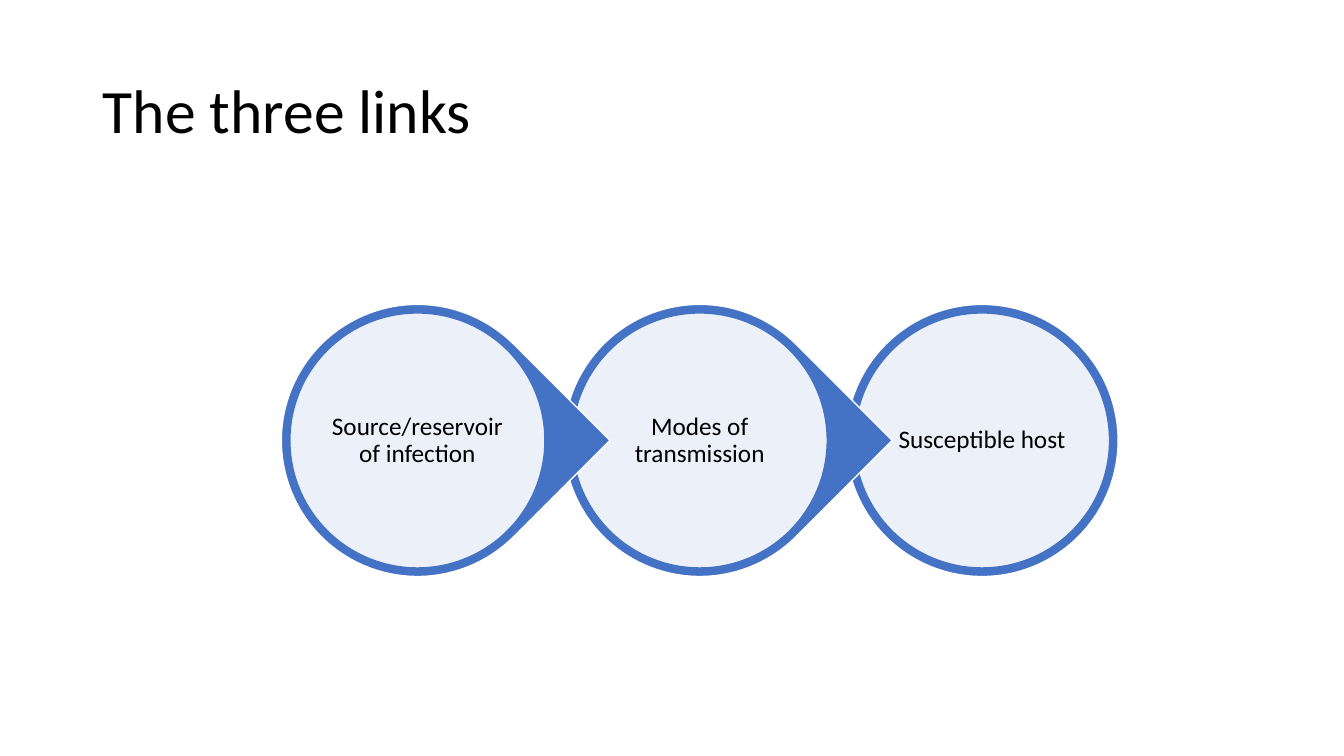
"""Build a slide showing the chain of three links of infection."""
from lxml.etree import SubElement
from pptx import Presentation
from pptx.dml.color import RGBColor
from pptx.enum.shapes import MSO_SHAPE
from pptx.enum.text import MSO_ANCHOR, PP_ALIGN
from pptx.oxml.ns import qn
from pptx.util import Inches, Pt

TITLE = "The three links"
LINKS = ["Source/reservoir of infection", "Modes of transmission", "Susceptible host"]
COLORS = {"blue": "4472C4", "white": "FFFFFF", "black": "000000"}
FONT = "Calibri"

LEFT, TOP, PITCH = 2.79, 3.02, 2.8
RING, DISC = 2.7, 2.53
INSET = (RING - DISC) / 2


def color(name):
    return RGBColor.from_string(COLORS[name])


def format_text(tf, size, align):
    tf.word_wrap = True
    tf.vertical_anchor = MSO_ANCHOR.MIDDLE
    p = tf.paragraphs[0]
    p.alignment = align
    p.line_spacing = 0.9
    font = p.runs[0].font
    font.name, font.size = FONT, Pt(size)
    font.color.rgb = color("black")


def add_round(slide, kind, x, y, size, fill, line):
    sp = slide.shapes.add_shape(kind, Inches(x), Inches(y), Inches(size), Inches(size))
    sp.shadow.inherit = False
    sp.fill.solid()
    sp.fill.fore_color.rgb = color(fill)
    sp.line.color.rgb = color(line)
    sp.line.width = Pt(1)
    return sp


def add_link(slide, i, label):
    x = LEFT + i * PITCH
    last = i == len(LINKS) - 1
    kind = MSO_SHAPE.OVAL if last else MSO_SHAPE.TEAR
    ring = add_round(slide, kind, x, TOP, RING, "blue", "white")
    ring.rotation = 0 if last else 45

    disc = add_round(slide, MSO_SHAPE.OVAL, x + INSET, TOP + INSET, DISC, "white", "blue")
    fill_color = disc.fill._xPr.find(qn("a:solidFill"))[0]
    SubElement(fill_color, qn("a:alpha"), val="90000")
    tf = disc.text_frame
    tf.text = label
    tf.margin_left = tf.margin_right = tf.margin_top = tf.margin_bottom = Inches(0.03)
    format_text(tf, 18, PP_ALIGN.CENTER)


def main():
    prs = Presentation()
    prs.slide_width, prs.slide_height = Inches(13.33), Inches(7.5)
    slide = prs.slides.add_slide(prs.slide_layouts[5])

    title = slide.shapes.title
    title.left, title.top = Inches(0.92), Inches(0.4)
    title.width, title.height = Inches(11.5), Inches(1.45)
    title.text_frame.text = TITLE
    format_text(title.text_frame, 44, PP_ALIGN.LEFT)

    for i, label in reversed(list(enumerate(LINKS))):
        add_link(slide, i, label)
    prs.save("out.pptx")


if __name__ == "__main__":
    main()
